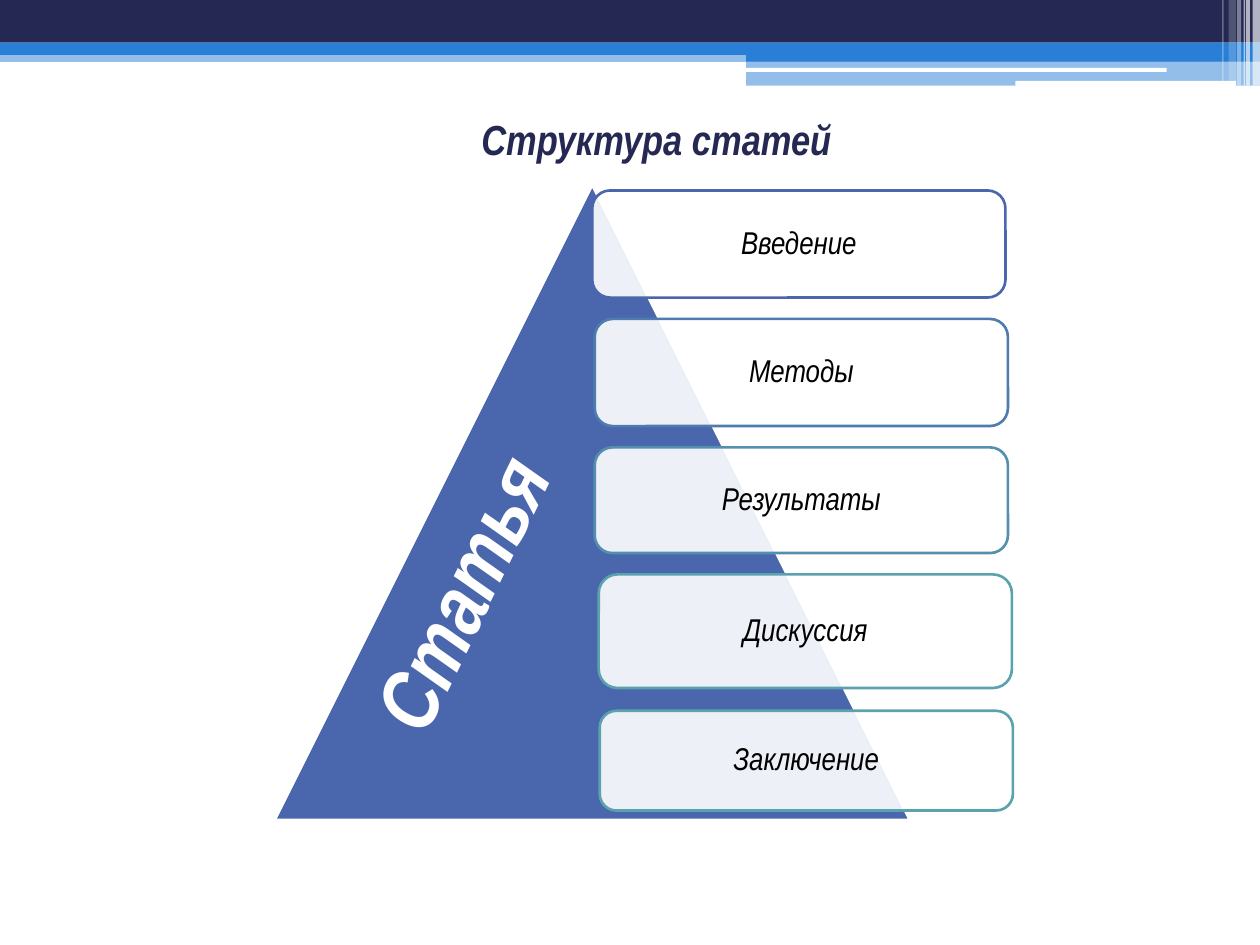
"""Build the slide showing the parts of an article beside a pyramid."""
from dataclasses import dataclass

from lxml.etree import SubElement
from pptx import Presentation
from pptx.dml.color import RGBColor
from pptx.enum.shapes import MSO_SHAPE
from pptx.enum.text import MSO_ANCHOR, PP_ALIGN
from pptx.oxml.ns import qn
from pptx.shapes.autoshape import Shape
from pptx.slide import Slide
from pptx.util import Cm, Pt

FONT = "Arial Narrow"
NAVY = RGBColor(0x24, 0x28, 0x52)
BLUE = RGBColor(0x29, 0x7F, 0xD5)
INDIGO = RGBColor(0x4A, 0x66, 0xAC)
STEEL = RGBColor(0x4E, 0x7C, 0xAE)
TEAL_BLUE = RGBColor(0x54, 0x90, 0xAE)
TEAL = RGBColor(0x5A, 0xA2, 0xAE)
WHITE = RGBColor(0xFF, 0xFF, 0xFF)
BLACK = RGBColor(0x00, 0x00, 0x00)

SLIDE_WIDTH, SLIDE_HEIGHT = 25.4, 19.05
CARD_WIDTH = 8.33


@dataclass(frozen=True)
class Box:
    left: float
    top: float
    width: float
    height: float


@dataclass(frozen=True)
class Bar:
    box: Box
    color: RGBColor
    opacity: int = 100
    kind: MSO_SHAPE = MSO_SHAPE.RECTANGLE


@dataclass(frozen=True)
class Card:
    text: str
    left: float
    top: float
    height: float
    color: RGBColor


@dataclass(frozen=True)
class Caption:
    text: str
    box: Box
    size: int
    color: RGBColor
    align: PP_ALIGN
    anchor: MSO_ANCHOR
    rotation: float = 0


BANNER = [
    Bar(Box(0, 1.02, SLIDE_WIDTH, 0.23), BLUE, 50),
    Bar(Box(0, 0, SLIDE_WIDTH, 0.86), NAVY),
    Bar(Box(0, 0.86, SLIDE_WIDTH, 0.25), BLUE),
    Bar(Box(15.04, 0.99, 10.36, 0.25), BLUE),
    Bar(Box(15.04, 1.22, 10.36, 0.51), BLUE, 50),
    Bar(Box(15.01, 1.37, 8.51, 0.08), WHITE, kind=MSO_SHAPE.ROUNDED_RECTANGLE),
    Bar(Box(20.47, 1.63, 4.45, 0.1), WHITE, kind=MSO_SHAPE.ROUNDED_RECTANGLE),
    Bar(Box(25.25, 0, 0.15, 1.73), WHITE, 65),
    Bar(Box(25.12, 0, 0.08, 1.73), WHITE, 65),
    Bar(Box(25.07, 0, 0.03, 1.73), WHITE, 60),
    Bar(Box(24.94, 0, 0.08, 1.73), WHITE, 40),
    Bar(Box(24.77, 0, 0.15, 1.63), WHITE, 20),
    Bar(Box(24.64, 0, 0.03, 1.63), WHITE, 30),
]
PYRAMID = Bar(Box(5.54, 3.73, 12.8, 12.8), INDIGO, kind=MSO_SHAPE.ISOSCELES_TRIANGLE)
CARDS = [
    Card("Введение", 11.94, 3.84, 2.16, INDIGO),
    Card("Методы", 11.99, 6.43, 2.16, STEEL),
    Card("Результаты", 11.99, 9.02, 2.13, TEAL_BLUE),
    Card("Дискуссия", 12.07, 11.58, 2.29, TEAL),
    Card("Заключение", 12.09, 14.33, 2.01, TEAL),
]
TITLE = Caption("Структура статей", Box(1.8, 1.93, 22.86, 1.75), 24, NAVY,
                PP_ALIGN.CENTER, MSO_ANCHOR.MIDDLE)
LABEL = Caption("Статья", Box(5.77, 10.29, 7.49, 2.31), 48, WHITE,
                PP_ALIGN.LEFT, MSO_ANCHOR.TOP, 296.1)


def lengths(box: Box) -> tuple[Cm, Cm, Cm, Cm]:
    return Cm(box.left), Cm(box.top), Cm(box.width), Cm(box.height)


def add_bar(s: Slide, bar: Bar) -> Shape:
    sp = s.shapes.add_shape(bar.kind, *lengths(bar.box))
    sp.shadow.inherit = False
    sp.fill.solid()
    sp.fill.fore_color.rgb = bar.color
    sp.line.fill.background()
    if bar.opacity < 100:
        color = sp.fill._xPr.find(qn("a:solidFill"))[0]
        SubElement(color, qn("a:alpha"), val=str(bar.opacity * 1000))
    return sp


def set_outline(sp: Shape, color: RGBColor) -> None:
    sp.line.color.rgb = color
    sp.line.width = Pt(1.5)


def set_text(sp: Shape, text: str, size: int, color: RGBColor, align: PP_ALIGN,
             anchor: MSO_ANCHOR, bold: bool) -> None:
    tf = sp.text_frame
    tf.text = text
    tf.word_wrap = True
    tf.vertical_anchor = anchor
    p = tf.paragraphs[0]
    p.alignment = align
    font = p.runs[0].font
    font.name, font.size = FONT, Pt(size)
    font.bold, font.italic = bold, True
    font.color.rgb = color


def add_card(s: Slide, card: Card) -> None:
    box = Box(card.left, card.top, CARD_WIDTH, card.height)
    sp = add_bar(s, Bar(box, WHITE, 90, MSO_SHAPE.ROUNDED_RECTANGLE))
    set_outline(sp, card.color)
    set_text(sp, card.text, 18, BLACK, PP_ALIGN.CENTER, MSO_ANCHOR.MIDDLE, False)
    sp.text_frame.paragraphs[0].line_spacing = 0.9


def add_caption(s: Slide, caption: Caption) -> None:
    sp = s.shapes.add_textbox(*lengths(caption.box))
    sp.rotation = caption.rotation
    set_text(sp, caption.text, caption.size, caption.color, caption.align,
             caption.anchor, True)


def main() -> None:
    prs = Presentation()
    prs.slide_width, prs.slide_height = Cm(SLIDE_WIDTH), Cm(SLIDE_HEIGHT)
    s = prs.slides.add_slide(prs.slide_layouts[6])
    for bar in BANNER:
        add_bar(s, bar)
    add_caption(s, TITLE)
    set_outline(add_bar(s, PYRAMID), WHITE)
    for card in CARDS:
        add_card(s, card)
    add_caption(s, LABEL)
    prs.save("out.pptx")


if __name__ == "__main__":
    main()
